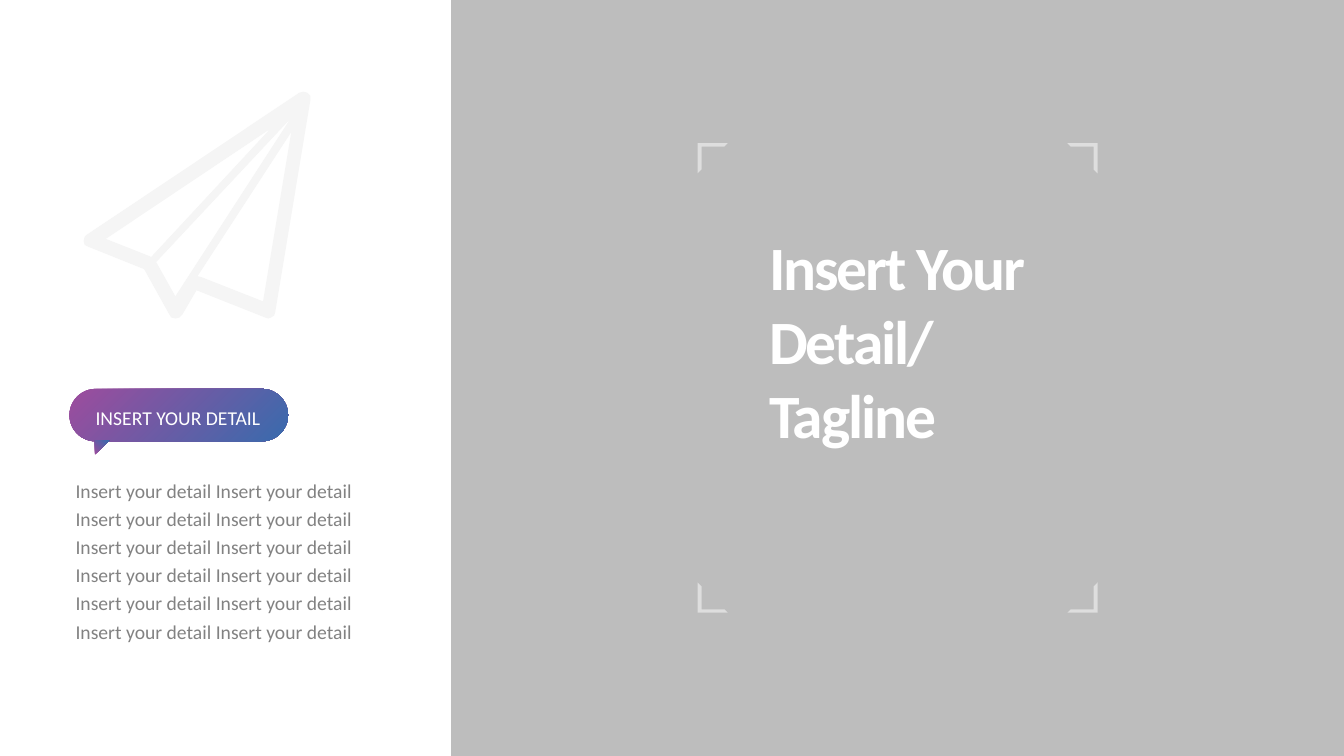
from pptx import Presentation
from pptx.dml.color import RGBColor as RGB
from pptx.enum.shapes import MSO_SHAPE as Kind
from pptx.enum.text import MSO_ANCHOR as Anchor, MSO_AUTO_SIZE as Fit, PP_ALIGN as Align
from pptx.oxml.ns import qn
from pptx.util import Cm, Pt
from lxml.etree import SubElement as Sub

HUES = {
    "panel": "5C5C5C",
    "white": "FFFFFF",
    "body": "828282",
    "plane": "F5F5F5",
    "start": "9D4C9D",
    "end": "396BAD",
}
FONT = "Calibri"
UNIT = Cm(0.0254)

PLANE = [
    [(305, 92), (301, 91), (297, 92), (86, 233), (84, 235), (83, 239),
     (84, 243), (88, 245), (143, 267), (168, 312), (170, 315), (174, 316),
     (178, 315), (181, 312), (195, 288), (263, 315), (266, 316), (269, 315),
     (272, 313), (273, 310), (308, 99), (308, 95)],
    [(261, 299), (200, 275), (196, 274), (289, 131)],
    [(155, 260), (288, 118), (174, 294)],
    [(105, 237), (268, 128), (150, 255), (148, 254)],
]


def hue(name):
    return RGB.from_string(HUES[name])


def paint(shape, name, alpha=None):
    shape.shadow.inherit = False
    shape.line.fill.background()
    shape.fill.solid()
    shape.fill.fore_color.rgb = hue(name)
    if alpha:
        tone = shape.element.spPr.find(qn("a:solidFill"))[0]
        Sub(tone, qn("a:alpha"), val=str(alpha * 1000))


def blend(shape):
    shape.shadow.inherit = False
    shape.line.fill.background()
    shape.fill.gradient()
    shape.fill.gradient_angle = 315
    for stop, name, spot in zip(shape.fill.gradient_stops, ("start", "end"), (0, 1)):
        stop.color.rgb = hue(name)
        stop.position = spot


def add(slide, kind, box, flip="", adj=()):
    shape = slide.shapes.add_shape(kind, *map(Cm, box))
    for i, val in enumerate(adj):
        shape.adjustments[i] = val
    for axis in flip:
        shape.element.spPr.find(qn("a:xfrm")).set("flip" + axis, "1")
    return shape


def write(shape, text, box, size, color, bold=False, align=Align.LEFT, lead=1.0, track=0):
    shape.left, shape.top, shape.width, shape.height = map(Cm, box)
    frame = shape.text_frame
    frame.text = text
    frame.word_wrap = True
    frame.auto_size = Fit.NONE
    frame.vertical_anchor = Anchor.TOP
    for para in frame.paragraphs:
        para.alignment = align
        para.line_spacing = lead
        para.space_before = Pt(0)
        props = para._p.get_or_add_pPr()
        props.set("marL", "0")
        props.set("indent", "0")
        Sub(props, qn("a:buNone"))
        for run in para.runs:
            font = run.font
            font.name, font.size, font.bold = FONT, Pt(size), bold
            font.color.rgb = hue(color)
            if track:
                run._r.get_or_add_rPr().set("spc", str(track))


def draw_plane(slide):
    rim, *holes = PLANE
    pen = slide.shapes.build_freeform(*rim[0], scale=UNIT)
    pen.add_line_segments(rim[1:])
    for hole in holes:
        pen.move_to(*hole[0])
        pen.add_line_segments(hole[1:])
    paint(pen.convert_to_shape(), "plane")


def draw_badge(slide):
    blend(add(slide, Kind.ROUNDED_RECTANGLE, (1.75, 9.8, 5.51, 1.32), adj=(0.5,)))
    blend(add(slide, Kind.RIGHT_TRIANGLE, (2.39, 11.1, 0.36, 0.36), flip="V"))
    box = (1.73, 9.98, 5.51, 0.94)
    label = slide.shapes.add_textbox(*map(Cm, box))
    write(label, "INSERT YOUR DETAIL", box, 14, "white", align=Align.CENTER, lead=1.2)


def draw_frame(slide):
    for left, side in ((17.58, ""), (26.9, "H")):
        for top, edge in ((3.61, ""), (14.68, "V")):
            mark = add(slide, Kind.HALF_FRAME, (left, top, 0.76, 0.76),
                       flip=side + edge, adj=(0.112, 0.132))
            paint(mark, "white", alpha=50)


def main():
    deck = Presentation()
    deck.slide_width, deck.slide_height = Cm(33.87), Cm(19.05)
    slide = deck.slides.add_slide(deck.slide_layouts[1])
    title, body = slide.placeholders

    paint(add(slide, Kind.RECTANGLE, (11.37, 0, 22.5, 19.05)), "panel", alpha=40)
    write(body, " ".join(["Insert your detail"] * 12),
          (1.65, 11.81, 7.52, 5.97), 14, "body", lead=1.2)
    draw_badge(slide)
    draw_plane(slide)
    draw_frame(slide)
    write(title, "Insert Your\nDetail/ Tagline",
          (19.13, 5.64, 6.99, 7.77), 44, "white", bold=True, track=-150)
    slide.shapes._spTree.append(title.element)
    deck.save("out.pptx")


if __name__ == "__main__":
    main()
